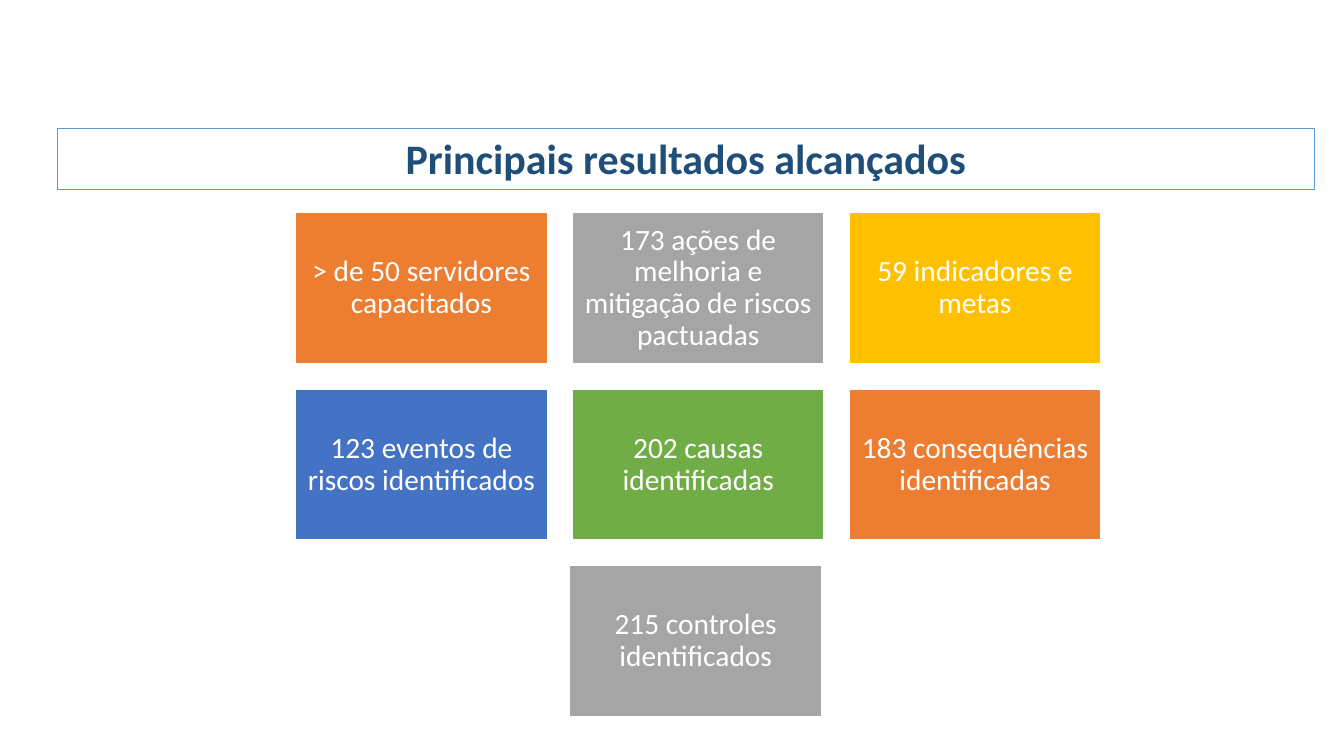
from pptx import Presentation
from pptx.dml.color import RGBColor
from pptx.enum.shapes import MSO_SHAPE
from pptx.enum.text import MSO_ANCHOR, PP_ALIGN
from pptx.util import Inches, Pt

RECTANGLE = MSO_SHAPE.RECTANGLE
MIDDLE = MSO_ANCHOR.MIDDLE
TOP = MSO_ANCHOR.TOP
CENTER = PP_ALIGN.CENTER

WHITE = RGBColor(0xFF, 0xFF, 0xFF)
NAVY = RGBColor(0x1F, 0x4E, 0x79)
LIGHT_BLUE = RGBColor(0x5B, 0x9B, 0xD5)
ORANGE = RGBColor(0xED, 0x7D, 0x31)
GRAY = RGBColor(0xA5, 0xA5, 0xA5)
GOLD = RGBColor(0xFF, 0xC0, 0x00)
BLUE = RGBColor(0x44, 0x72, 0xC4)
GREEN = RGBColor(0x70, 0xAD, 0x47)

TITLE_FONT = {"name": "Calibri", "size": Pt(30), "bold": True}
TILE_FONT = {"name": "Calibri", "size": Pt(21), "bold": False}
TILE_FRAME = {
    "vertical_anchor": MIDDLE,
    "margin_left": Inches(0.09),
    "margin_right": Inches(0.09),
    "margin_top": Inches(0.09),
    "margin_bottom": Inches(0.09),
}

TILE_WIDTH, TILE_HEIGHT = 2.5, 1.5
COLUMN_GAP, ROW_GAP = 0.245, 0.25
LAST_ROW_OFFSET = 2.72

RESULT_ROWS = [
    (0, [
        ("> de 50 servidores capacitados", ORANGE),
        ("173 ações de melhoria e mitigação de riscos pactuadas", GRAY),
        ("59 indicadores e metas", GOLD),
    ]),
    (0, [
        ("123 eventos de riscos identificados", BLUE),
        ("202 causas identificadas", GREEN),
        ("183 consequências identificadas", ORANGE),
    ]),
    (LAST_ROW_OFFSET, [("215 controles identificados", GRAY)]),
]


def set_attributes(target, values):
    for name, value in values.items():
        setattr(target, name, value)


def add_text_rectangle(slide, box, text, fill, line, line_width, color, font, frame):
    shape = slide.shapes.add_shape(RECTANGLE, *(Inches(length) for length in box))
    shape.shadow.inherit = False
    shape.fill.solid()
    shape.fill.fore_color.rgb = fill
    shape.line.color.rgb = line
    shape.line.width = Pt(line_width)
    text_frame = shape.text_frame
    text_frame.word_wrap = True
    set_attributes(text_frame, frame)
    paragraph = text_frame.paragraphs[0]
    paragraph.text = text
    paragraph.alignment = CENTER
    set_attributes(paragraph.font, font)
    paragraph.font.color.rgb = color
    return paragraph


def add_title(slide, box):
    add_text_rectangle(slide, box, "Principais resultados alcançados", WHITE,
                       LIGHT_BLUE, 0.75, NAVY, TITLE_FONT, {"vertical_anchor": TOP})


def add_result_tiles(slide, left, top):
    for row, (offset, results) in enumerate(RESULT_ROWS):
        for column, (text, fill) in enumerate(results):
            box = (
                left + offset + column * (TILE_WIDTH + COLUMN_GAP),
                top + row * (TILE_HEIGHT + ROW_GAP),
                TILE_WIDTH,
                TILE_HEIGHT,
            )
            paragraph = add_text_rectangle(slide, box, text, fill, WHITE, 1,
                                           WHITE, TILE_FONT, TILE_FRAME)
            paragraph.line_spacing = 0.9


def main():
    presentation = Presentation()
    presentation.slide_width = Inches(13.33)
    presentation.slide_height = Inches(7.5)
    slide = presentation.slides.add_slide(presentation.slide_layouts[6])
    add_title(slide, (0.57, 1.27, 12.47, 0.61))
    add_result_tiles(slide, 2.93, 2.11)
    presentation.save("out.pptx")


if __name__ == "__main__":
    main()
